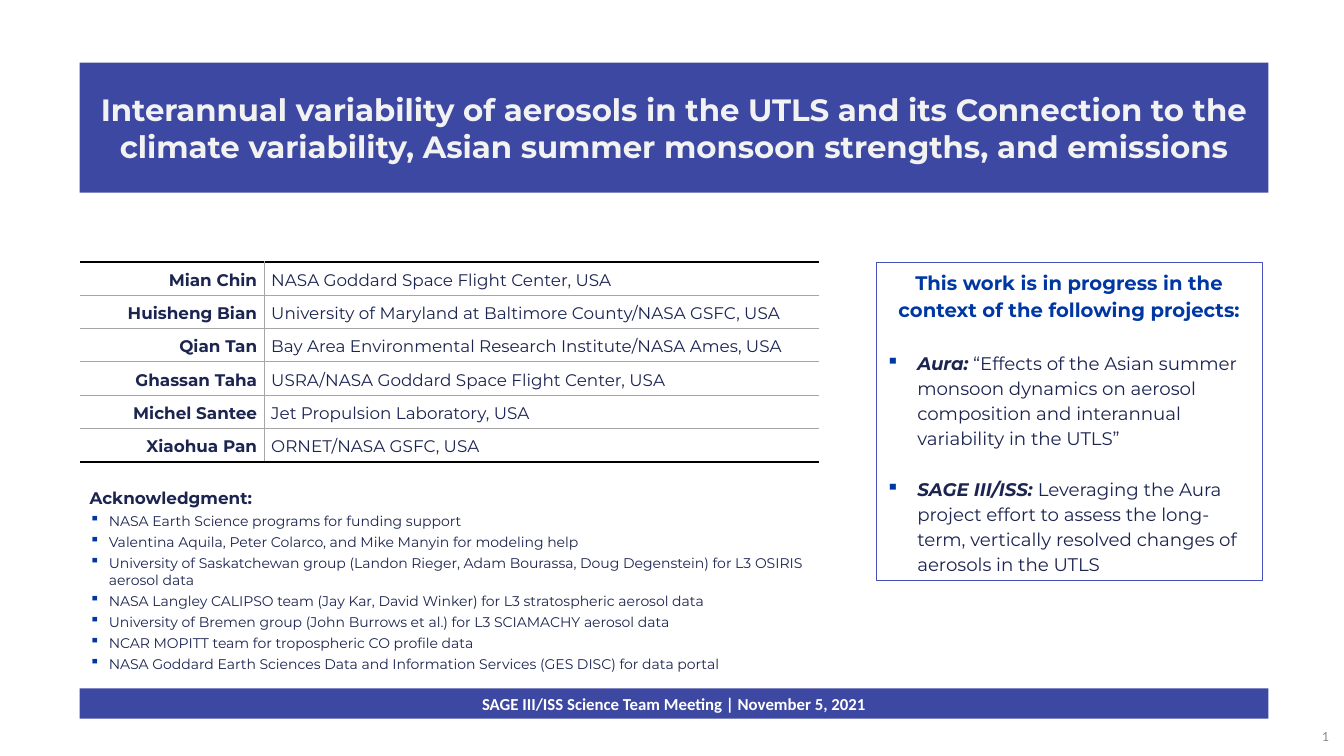
from lxml import etree
from pptx import Presentation
from pptx.dml.color import RGBColor
from pptx.enum.shapes import MSO_SHAPE
from pptx.enum.text import MSO_ANCHOR, MSO_AUTO_SIZE, PP_ALIGN
from pptx.oxml.ns import qn
from pptx.util import Inches, Pt

INDIGO = RGBColor(0x3C, 0x48, 0xA1)
OUTLINE = RGBColor(0x46, 0x50, 0xBB)
BLUE = RGBColor(0x00, 0x38, 0xA3)
NAVY = RGBColor(0x1C, 0x24, 0x50)
PALE = RGBColor(0xF2, 0xF2, 0xF2)
WHITE = RGBColor(0xFF, 0xFF, 0xFF)
GRAY = RGBColor(0x8C, 0x8C, 0x8C)
RULE_GRAY = RGBColor(0xA6, 0xA6, 0xA6)
BLACK = RGBColor(0x00, 0x00, 0x00)
RECTANGLE = MSO_SHAPE.RECTANGLE
TOP, MIDDLE = MSO_ANCHOR.TOP, MSO_ANCHOR.MIDDLE
LEFT, CENTER, RIGHT = PP_ALIGN.LEFT, PP_ALIGN.CENTER, PP_ALIGN.RIGHT
NO_AUTOFIT = MSO_AUTO_SIZE.NONE
TITLE_ONLY = 5

MARGIN = 5.93
BAND_WIDTH = 88.45
BODY_TOP = 34.67
TABLE_COLUMNS = (13.73, 41.26)
TABLE_ROW = 4.4

AUTHORS = [
    ("Mian Chin", "NASA Goddard Space Flight Center, USA"),
    ("Huisheng Bian", "University of Maryland at Baltimore County/NASA GSFC, USA"),
    ("Qian Tan", "Bay Area Environmental Research Institute/NASA Ames, USA"),
    ("Ghassan Taha", "USRA/NASA Goddard Space Flight Center, USA"),
    ("Michel Santee", "Jet Propulsion Laboratory, USA"),
    ("Xiaohua Pan", "ORNET/NASA GSFC, USA"),
]
THANKS = [
    "NASA Earth Science programs for funding support",
    "Valentina Aquila, Peter Colarco, and Mike Manyin for modeling help",
    "University of Saskatchewan group (Landon Rieger, Adam Bourassa, Doug Degenstein) for L3 OSIRIS aerosol data",
    "NASA Langley CALIPSO team (Jay Kar, David Winker) for L3 stratospheric aerosol data",
    "University of Bremen group (John Burrows et al.) for L3 SCIAMACHY aerosol data",
    "NCAR MOPITT team for tropospheric CO profile data",
    "NASA Goddard Earth Sciences Data and Information Services (GES DISC) for data portal",
]
PROJECTS = [
    ("Aura:", " “Effects of the Asian summer monsoon dynamics on aerosol composition and interannual variability in the UTLS”", 19.6),
    ("SAGE III/ISS: ", "Leveraging the Aura project effort to assess the long-term, vertically resolved changes of aerosols in the UTLS", 18.2),
]


def apply(target, values):
    for name, value in values.items():
        setattr(target, name, value)


class SlideBuilder:
    body = {"name": "Montserrat", "size": Pt(12), "bold": False}

    def __init__(self, deck):
        self.deck = deck
        self.slide = deck.slides.add_slide(deck.slide_layouts[TITLE_ONLY])

    def across(self, percent):
        return round(self.deck.slide_width * percent / 100)

    def down(self, percent):
        return round(self.deck.slide_height * percent / 100)

    def area(self, left, top, width, height):
        return self.across(left), self.down(top), self.across(width), self.down(height)

    def fill_paragraph(self, para, spans, bullet_indent=None, **layout):
        if bullet_indent:
            properties = para._p.get_or_add_pPr()
            properties.set("marL", str(Inches(bullet_indent)))
            properties.set("indent", str(-Inches(bullet_indent)))
            color = etree.SubElement(properties, qn("a:buClr"))
            etree.SubElement(color, qn("a:srgbClr"), val=str(BLUE))
            etree.SubElement(properties, qn("a:buChar"), char="▪")
        apply(para, layout)
        for text, color, style in spans:
            run = para.add_run()
            run.text = text
            apply(run.font, {**self.body, **style})
            run.font.color.rgb = color

    def fill_frame(self, frame, paragraphs, anchor):
        apply(frame, {"word_wrap": True, "auto_size": NO_AUTOFIT, "vertical_anchor": anchor})
        for index, (spans, layout) in enumerate(paragraphs):
            para = frame.add_paragraph() if index else frame.paragraphs[0]
            self.fill_paragraph(para, spans, **layout)

    def title(self, place, spans):
        title = self.slide.shapes.title
        apply(title, dict(zip(("left", "top", "width", "height"), self.area(*place))))
        title.fill.solid()
        title.fill.fore_color.rgb = INDIGO
        self.fill_frame(title.text_frame, [(spans, {"alignment": CENTER})], MIDDLE)

    def text(self, place, paragraphs, anchor=TOP):
        box = self.slide.shapes.add_textbox(*self.area(*place))
        self.fill_frame(box.text_frame, paragraphs, anchor)
        return box

    def panel(self, place, paragraphs, anchor, fill=None, outline=None):
        box = self.slide.shapes.add_shape(RECTANGLE, *self.area(*place))
        box.shadow.inherit = False
        if fill:
            box.fill.solid()
            box.fill.fore_color.rgb = fill
        else:
            box.fill.background()
        if outline:
            box.line.color.rgb = outline
            box.line.width = Pt(0.75)
        else:
            box.line.fill.background()
        self.fill_frame(box.text_frame, paragraphs, anchor)

    def page_number(self, place):
        span = ("1", GRAY, {"name": "Calibri", "size": Pt(10)})
        box = self.text(place, [([span], {"alignment": RIGHT})], MIDDLE)
        field = box.text_frame.paragraphs[0].runs[0]._r
        field.tag = qn("a:fld")
        field.set("id", "{B6F15528-21DE-4FAA-801E-634DDDAF4B2B}")
        field.set("type", "slidenum")

    def border(self, cell, side, rule):
        properties = cell._tc.get_or_add_tcPr()
        line = etree.SubElement(properties, qn(f"a:ln{side}"))
        if rule is None:
            line.set("w", "0")
            etree.SubElement(line, qn("a:noFill"))
            return
        color, points = rule
        line.set("w", str(Pt(points)))
        fill = etree.SubElement(line, qn("a:solidFill"))
        etree.SubElement(fill, qn("a:srgbClr"), val=str(color))

    def table(self, left, top, widths, row_height, rows):
        place = self.area(left, top, sum(widths), row_height * len(rows))
        table = self.slide.shapes.add_table(len(rows), len(widths), *place).table
        apply(table, {"first_row": False, "horz_banding": False})
        for column, width in zip(table.columns, widths):
            column.width = self.across(width)
        thin, thick = (RULE_GRAY, 1), (BLACK, 1.5)
        last = len(rows) - 1
        for row, texts in enumerate(rows):
            table.rows[row].height = self.down(row_height)
            for column, text in enumerate(texts):
                cell = table.cell(row, column)
                apply(cell, {"margin_left": Inches(0.07), "margin_right": Inches(0.07),
                             "margin_top": 0, "margin_bottom": 0, "vertical_anchor": MIDDLE})
                self.border(cell, "L", thin if column else None)
                self.border(cell, "R", None if column else thin)
                self.border(cell, "T", thin if row else thick)
                self.border(cell, "B", thick if row == last else thin)
                cell.fill.background()
                self.fill_paragraph(cell.text_frame.paragraphs[0],
                                    [(text, NAVY, {"bold": column == 0})],
                                    alignment=LEFT if column else RIGHT, line_spacing=1.15)


def main():
    deck = Presentation()
    deck.slide_width, deck.slide_height = Inches(13.33), Inches(7.5)
    page = SlideBuilder(deck)

    page.title((MARGIN, 8.27, BAND_WIDTH, 17.2), [(
        "Interannual variability of aerosols in the UTLS and its Connection to the "
        "climate variability, Asian summer monsoon strengths, and emissions",
        PALE, {"size": Pt(22), "bold": True})])
    page.page_number((76.29, 94.67, 23.33, 5.33))
    page.table(MARGIN, BODY_TOP, TABLE_COLUMNS, TABLE_ROW, AUTHORS)

    thanks = [([("Acknowledgment:", NAVY, {"bold": True})], {"space_after": Pt(3)})]
    thanks += [([(text, NAVY, {"size": Pt(10)})],
                {"bullet_indent": 0.19, "space_after": Pt(3)}) for text in THANKS]
    page.text((MARGIN, 63.87, sum(TABLE_COLUMNS), 25.87), thanks)

    page.panel((MARGIN, 91.07, BAND_WIDTH, 4), [(
        [("SAGE III/ISS Science Team Meeting | November 5, 2021", WHITE,
          {"name": "Calibri", "bold": True})], {"alignment": CENTER})], TOP, fill=INDIGO)

    projects = [([("This work is in progress in the context of the following projects:", BLUE,
                   {"size": Pt(14), "bold": True})],
                 {"alignment": CENTER, "line_spacing": 1.15})]
    projects += [([(name, NAVY, {"size": Pt(13), "bold": True, "italic": True}),
                   (goal, NAVY, {"size": Pt(13)})],
                  {"bullet_indent": 0.31, "alignment": LEFT, "line_spacing": 1.15,
                   "space_before": Pt(gap)}) for name, goal, gap in PROJECTS]
    page.panel((65.19, BODY_TOP, 28.73, 42.13), projects, MIDDLE, outline=OUTLINE)

    deck.save("out.pptx")


if __name__ == "__main__":
    main()
